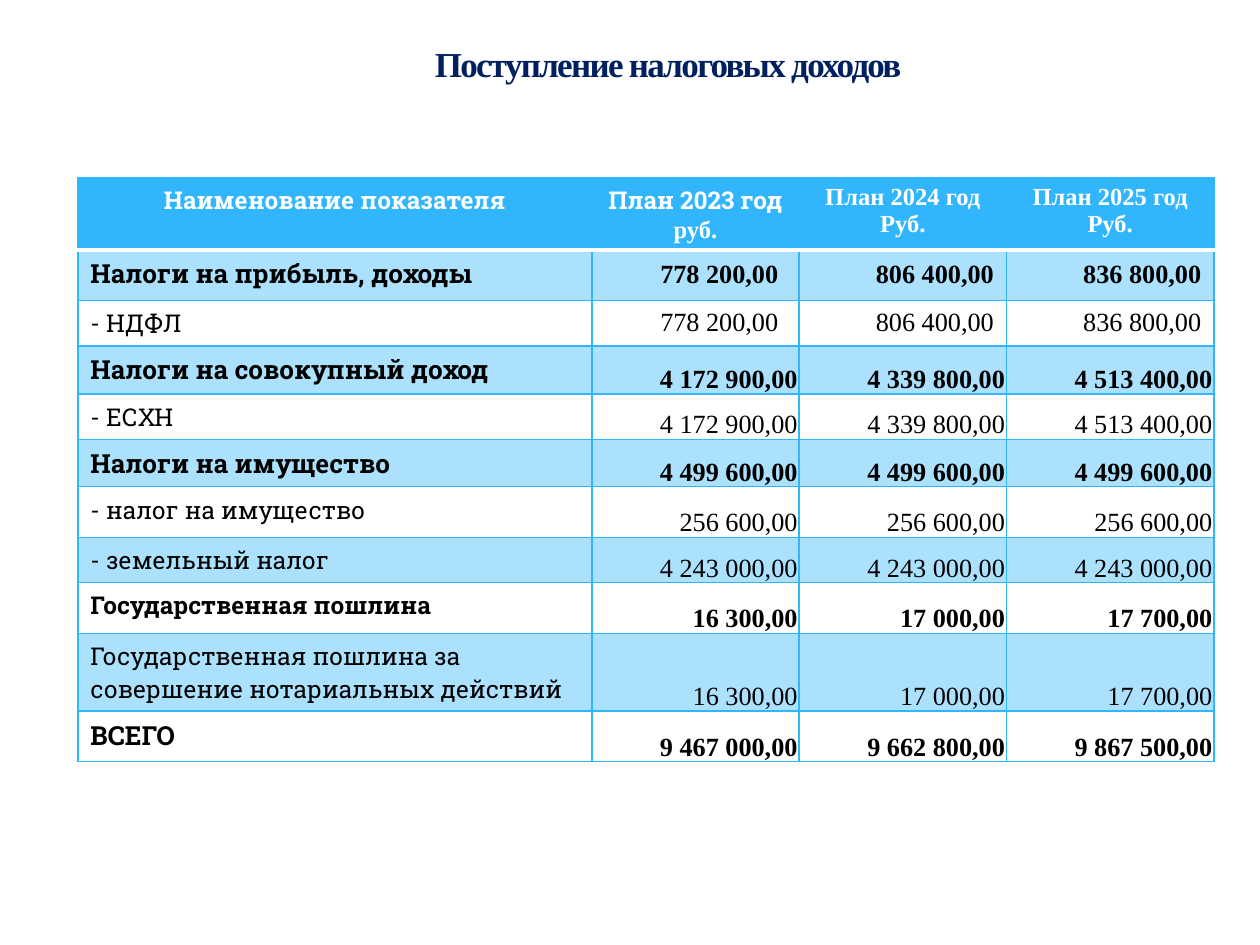
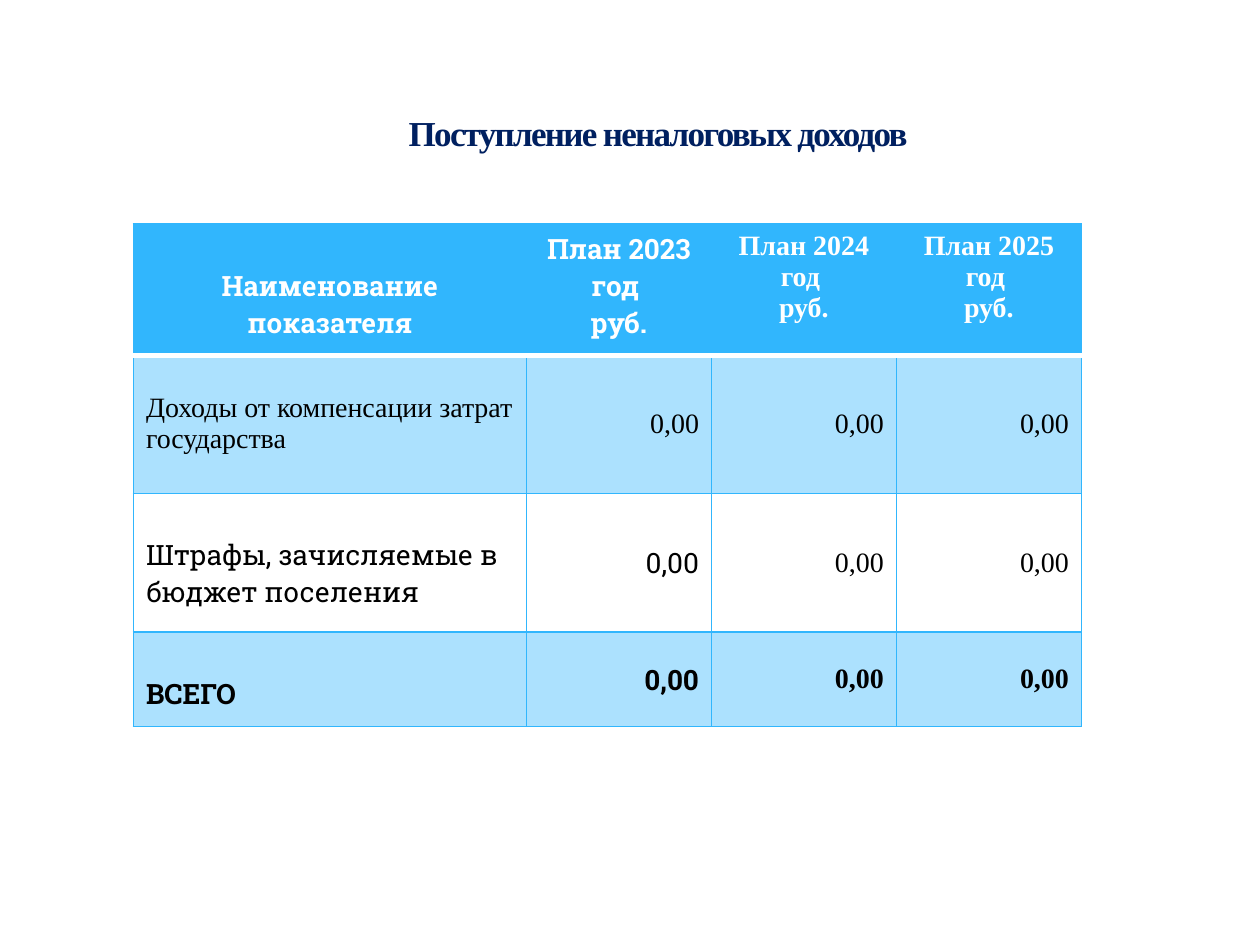
from lxml.etree import SubElement
from pptx import Presentation
from pptx.dml.color import RGBColor
from pptx.enum.text import MSO_ANCHOR, MSO_AUTO_SIZE, PP_ALIGN
from pptx.oxml import parse_xml
from pptx.oxml.ns import nsdecls, qn
from pptx.util import Cm, Pt

NAVY = RGBColor(0x00, 0x20, 0x60)
BLUE = RGBColor(0x31, 0xB6, 0xFD)
WHITE = RGBColor(0xFF, 0xFF, 0xFF)
BLACK = RGBColor(0x00, 0x00, 0x00)
OUTLINE = RGBColor(0xAF, 0xCC, 0xDE)
SLAB = "Roboto Slab"
TIMES = "Times New Roman"

TAX = {
    "title": "Поступление налоговых доходов",
    "title_box": (4.17, 0.58, 18.59, 1.4),
    "corner": (1.57, 3.58),
    "widths": [10.36, 4.18, 4.18, 4.18],
    "heights": [1.4, 1.02, 0.91, 0.97, 0.84, 0.86, 1.02, 0.91, 1.02, 1.4, 1.02],
    "header_size": 14,
    "value_size": 15,
    "header_gap": 0.13,
    "header": [
        [("Наименование показателя", SLAB)],
        [("План 2023 год", SLAB), ("руб.", TIMES)],
        [("План 2024 год", TIMES), ("Руб.", TIMES)],
        [("План 2025 год", TIMES), ("Руб.", TIMES)],
    ],
    "rows": [
        ("Налоги на прибыль, доходы", SLAB, 15, True, ["778 200,00", "806 400,00", "836 800,00"]),
        ("- НДФЛ", SLAB, 14, False, ["778 200,00", "806 400,00", "836 800,00"]),
        ("Налоги на совокупный доход", SLAB, 15, True, ["4 172 900,00", "4 339 800,00", "4 513 400,00"]),
        ("- ЕСХН", SLAB, 14, False, ["4 172 900,00", "4 339 800,00", "4 513 400,00"]),
        ("Налоги на имущество", SLAB, 15, True, ["4 499 600,00"] * 3),
        ("- налог на имущество", SLAB, 14, False, ["256 600,00"] * 3),
        ("- земельный налог", SLAB, 14, False, ["4 243 000,00"] * 3),
        ("Государственная пошлина", SLAB, 14, True, ["16 300,00", "17 000,00", "17 700,00"]),
        ("Государственная пошлина за совершение нотариальных действий", SLAB, 14, False,
         ["16 300,00", "17 000,00", "17 700,00"]),
        ("ВСЕГО", SLAB, 15, True, ["9 467 000,00", "9 662 800,00", "9 867 500,00"]),
    ],
    "label_gaps": [0.13] * 10,
    "value_fonts": [TIMES] * 10,
    "middle_rows": 2,
    "first_value_inset": 0.42,
}
NON_TAX = {
    "title": "Поступление неналоговых доходов",
    "title_box": (3.51, 1.73, 19.51, 1.88),
    "corner": (2.69, 4.52),
    "widths": [7.92, 3.73, 3.73, 3.73],
    "heights": [2.64, 2.79, 2.79, 1.91],
    "header_size": 16,
    "value_size": 16,
    "header_gap": 0.87,
    "header": [
        [("Наименование показателя", SLAB)],
        [("План 2023 год ", SLAB), ("руб.", SLAB)],
        [("План 2024 год ", TIMES), ("руб.", TIMES)],
        [("План 2025 год ", TIMES), ("руб.", TIMES)],
    ],
    "rows": [
        ("Доходы от компенсации затрат государства", TIMES, 16, False, ["0,00"] * 3),
        ("Штрафы, зачисляемые в бюджет поселения", SLAB, 16, False, ["0,00"] * 3),
        ("ВСЕГО", SLAB, 16, True, ["0,00"] * 3),
    ],
    "label_gaps": [0.75, 0.87, 0.87],
    "value_fonts": [TIMES, SLAB, SLAB],
    "middle_rows": 3,
    "first_value_inset": 0.25,
}


def write_lines(frame, lines, size, color, bold, align):
    for index, (text, font) in enumerate(lines):
        para = frame.add_paragraph() if index else frame.paragraphs[0]
        para.alignment = align
        span = para.add_run()
        span.text = text
        span.font.name = font
        span.font.size = Pt(size)
        span.font.bold = bold
        span.font.color.rgb = color


def paint_cell(cell, row):
    if row % 2 or row == 0:
        cell.fill.solid()
        cell.fill.fore_color.rgb = BLUE
    else:
        cell.fill.background()
    properties = cell._tc.get_or_add_tcPr()
    if row % 2:
        SubElement(properties.find(".//" + qn("a:srgbClr")), qn("a:alpha"), val="40000")
    for index, side in enumerate("LRTB"):
        divider = (row, side) in [(0, "B"), (1, "T")]
        color, width = (WHITE, Pt(3)) if divider else (BLUE, Pt(1))
        properties.insert(index, parse_xml(
            f'<a:ln{side} {nsdecls("a")} w="{width}"><a:solidFill>'
            f'<a:srgbClr val="{color}"/></a:solidFill></a:ln{side}>'))


deck = Presentation()
deck.slide_width = Cm(25.4)
deck.slide_height = Cm(19.05)

for section in (TAX, NON_TAX):
    page = deck.slides.add_slide(deck.slide_layouts[5])
    title = page.shapes.title
    title.left, title.top, title.width, title.height = map(Cm, section["title_box"])
    frame = title.text_frame
    frame.auto_size = MSO_AUTO_SIZE.NONE
    frame.vertical_anchor = MSO_ANCHOR.MIDDLE
    write_lines(frame, [(section["title"], TIMES)], 20, NAVY, True, PP_ALIGN.CENTER)
    letters = frame.paragraphs[0].runs[0].font._element
    letters.set("spc", "-100")
    letters.insert(0, parse_xml(
        f'<a:ln {nsdecls("a")} w="{Pt(0.25)}"><a:solidFill><a:srgbClr val="{OUTLINE}">'
        '<a:alpha val="25000"/></a:srgbClr></a:solidFill></a:ln>'))

    widths, heights = section["widths"], section["heights"]
    box = page.shapes.add_table(
        len(heights), len(widths), *map(Cm, section["corner"]), Cm(sum(widths)), Cm(sum(heights)))
    table = box.table
    table.horz_banding = False
    for column, width in zip(table.columns, widths):
        column.width = Cm(width)
    for line, height in zip(table.rows, heights):
        line.height = Cm(height)

    for column, lines in enumerate(section["header"]):
        cell = table.cell(0, column)
        write_lines(cell.text_frame, lines, section["header_size"], WHITE, True, PP_ALIGN.CENTER)
        paint_cell(cell, 0)
    table.cell(0, 0).margin_top = Cm(section["header_gap"])

    for row, (label, font, size, bold, values) in enumerate(section["rows"], 1):
        cell = table.cell(row, 0)
        cell.margin_top = Cm(section["label_gaps"][row - 1])
        write_lines(cell.text_frame, [(label, font)], size, BLACK, bold, PP_ALIGN.LEFT)
        paint_cell(cell, row)
        for column, value in enumerate(values, 1):
            cell = table.cell(row, column)
            value_font = section["value_fonts"][row - 1] if column == 1 else TIMES
            write_lines(cell.text_frame, [(value, value_font)], section["value_size"],
                        BLACK, bold, PP_ALIGN.RIGHT)
            if row <= section["middle_rows"]:
                cell.vertical_anchor = MSO_ANCHOR.MIDDLE
                if column == 1:
                    cell.margin_right = Cm(section["first_value_inset"])
            else:
                cell.vertical_anchor = MSO_ANCHOR.BOTTOM
                cell.margin_left = cell.margin_right = cell.margin_top = Cm(0.03)
                cell.margin_bottom = Cm(0)
            paint_cell(cell, row)

deck.save("out.pptx")
